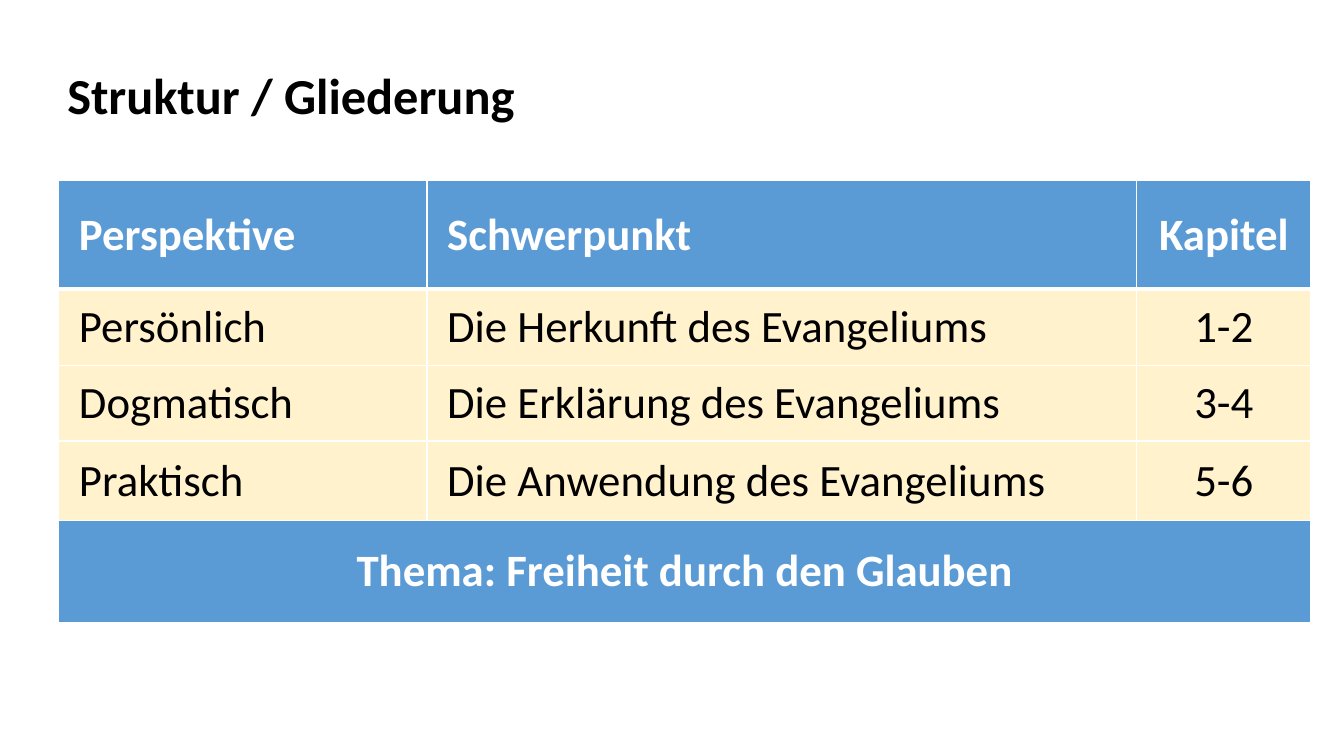
from dataclasses import dataclass
from typing import Any

from lxml.etree import SubElement
from pptx import Presentation
from pptx.dml.color import RGBColor
from pptx.enum.text import MSO_ANCHOR, MSO_AUTO_SIZE, PP_ALIGN
from pptx.oxml.ns import qn
from pptx.util import Pt


@dataclass(frozen=True)
class Theme:
    """Colours, font and type sizes of the slide."""

    font: str = "Calibri"
    title_size: float = 36
    table_size: float = 32
    black: str = "000000"
    white: str = "FFFFFF"
    blue: str = "5B9BD5"
    cream: str = "FFF2CC"


@dataclass(frozen=True)
class CellStyle:
    """Look of the cells in one table row."""

    fill: str
    color: str
    bold: bool
    side_margin: float = 14.4
    end_margin: float = 0
    top_border: float = 1
    bottom_border: float = 1


@dataclass(frozen=True)
class TableRow:
    """Texts, height and style of one table row."""

    texts: tuple[str, ...]
    height: float
    style: CellStyle


THEME = Theme()
HEADER = CellStyle(THEME.blue, THEME.white, True, bottom_border=3)
FIRST_BODY = CellStyle(THEME.cream, THEME.black, False, top_border=3)
BODY = CellStyle(THEME.cream, THEME.black, False)
FOOTER = CellStyle(THEME.blue, THEME.white, True, side_margin=10.8, end_margin=5.04)

COLUMN_WIDTHS = (263, 507, 124.5)
ALIGNMENTS = (PP_ALIGN.LEFT, PP_ALIGN.LEFT, PP_ALIGN.CENTER)
ROWS = (
    TableRow(("Perspektive", "Schwerpunkt", "Kapitel"), 77.5, HEADER),
    TableRow(("Persönlich", "Die Herkunft des Evangeliums", "1-2"), 54.5, FIRST_BODY),
    TableRow(("Dogmatisch", "Die Erklärung des Evangeliums", "3-4"), 54, BODY),
    TableRow(("Praktisch", "Die Anwendung des Evangeliums", "5-6"), 57, BODY),
    TableRow(("Thema: Freiheit durch den Glauben",), 72.5, FOOTER),
)


def apply_format(target: Any, values: dict[str, Any]) -> None:
    """Set every named attribute on the target."""
    for name, value in values.items():
        setattr(target, name, value)


def write_text(paragraph: Any, text: str, size: float, color: str, bold: bool) -> None:
    """Write one formatted run into the paragraph."""
    run = paragraph.add_run()
    run.text = text
    apply_format(run.font, {"name": THEME.font, "size": Pt(size), "bold": bold})
    run.font.color.rgb = RGBColor.from_string(color)


def add_title(slide: Any, text: str) -> None:
    """Add the slide title."""
    shape = slide.shapes.add_textbox(Pt(41), Pt(42), Pt(338), Pt(51))
    apply_format(
        shape.text_frame,
        {"word_wrap": False, "auto_size": MSO_AUTO_SIZE.SHAPE_TO_FIT_TEXT},
    )
    paragraph = shape.text_frame.paragraphs[0]
    write_text(paragraph, text, THEME.title_size, THEME.black, True)


def style_cell(cell: Any, style: CellStyle) -> None:
    """Give the cell its borders, fill and margins."""
    properties = cell._tc.get_or_add_tcPr()
    borders = {"L": 1, "R": 1, "T": style.top_border, "B": style.bottom_border}
    for side, width in borders.items():
        line = SubElement(properties, qn(f"a:ln{side}"), w=str(Pt(width)))
        SubElement(SubElement(line, qn("a:solidFill")), qn("a:srgbClr"), val=THEME.white)
    cell.fill.solid()
    cell.fill.fore_color.rgb = RGBColor.from_string(style.fill)
    side_margin, end_margin = Pt(style.side_margin), Pt(style.end_margin)
    apply_format(
        cell,
        {
            "margin_left": side_margin,
            "margin_right": side_margin,
            "margin_top": end_margin,
            "margin_bottom": end_margin,
            "vertical_anchor": MSO_ANCHOR.MIDDLE,
        },
    )


def add_outline_table(slide: Any) -> None:
    """Add the outline table with its merged theme row."""
    width, height = sum(COLUMN_WIDTHS), sum(row.height for row in ROWS)
    table = slide.shapes.add_table(
        len(ROWS), len(COLUMN_WIDTHS), Pt(42), Pt(129), Pt(width), Pt(height)
    ).table
    apply_format(table, {"horz_banding": False})
    for column, column_width in zip(table.columns, COLUMN_WIDTHS):
        column.width = Pt(column_width)
    for index, row in enumerate(ROWS):
        table.rows[index].height = Pt(row.height)
        cells = table.rows[index].cells
        for cell in cells:
            style_cell(cell, row.style)
        spans_table = len(row.texts) == 1
        if spans_table:
            table.cell(index, 0).merge(table.cell(index, len(COLUMN_WIDTHS) - 1))
        for cell, text, alignment in zip(cells, row.texts, ALIGNMENTS):
            paragraph = cell.text_frame.paragraphs[0]
            paragraph.alignment = PP_ALIGN.CENTER if spans_table else alignment
            write_text(paragraph, text, THEME.table_size, row.style.color, row.style.bold)


def main() -> None:
    """Build and save the presentation."""
    presentation = Presentation()
    apply_format(presentation, {"slide_width": Pt(960), "slide_height": Pt(540)})
    slide = presentation.slides.add_slide(presentation.slide_layouts[6])
    add_title(slide, "Struktur / Gliederung")
    add_outline_table(slide)
    presentation.save("out.pptx")


if __name__ == "__main__":
    main()
